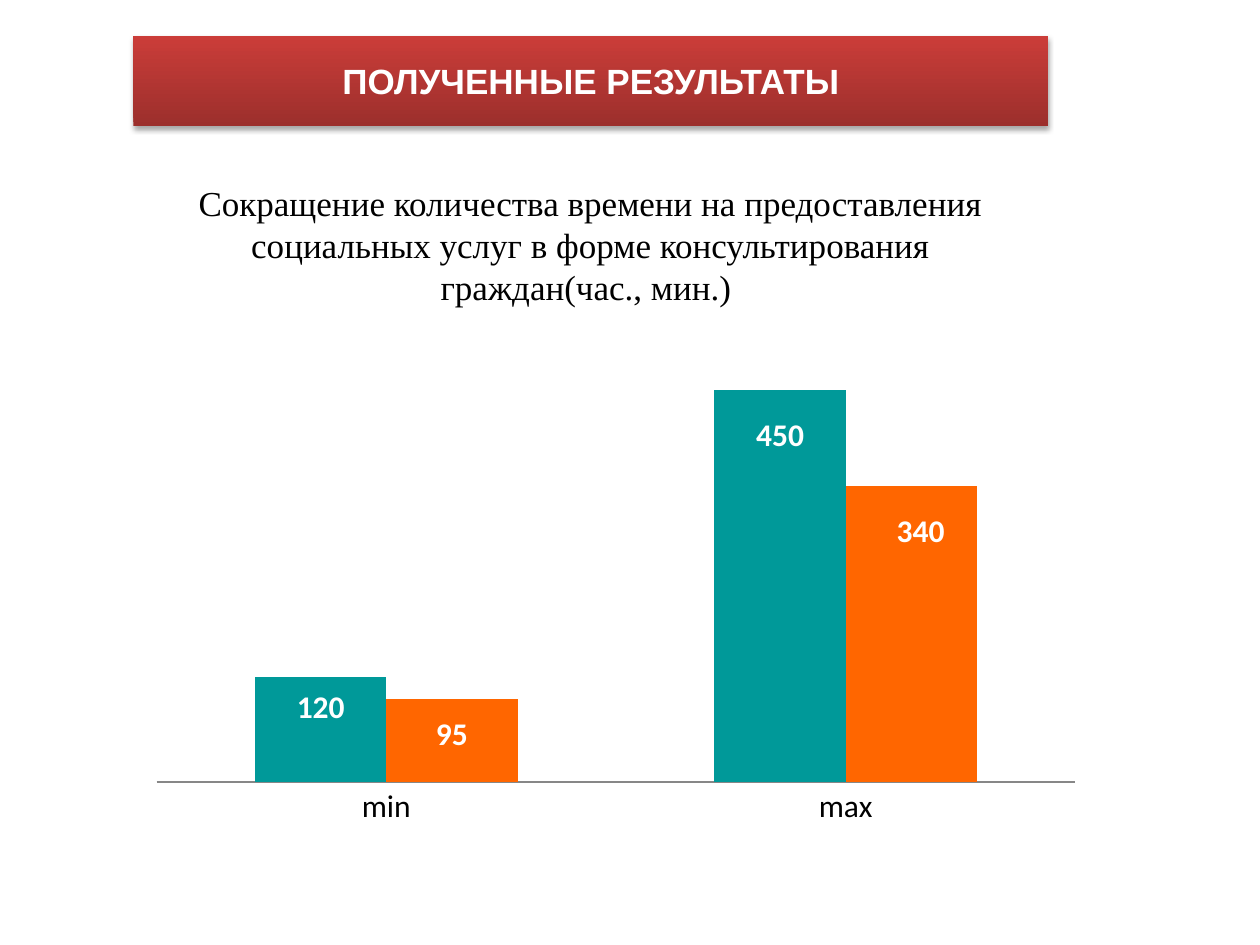
from dataclasses import dataclass

from lxml.etree import SubElement
from pptx import Presentation
from pptx.chart.data import CategoryChartData
from pptx.dml.color import RGBColor
from pptx.enum.chart import XL_CHART_TYPE as ChartType
from pptx.enum.chart import XL_LABEL_POSITION as LabelPosition
from pptx.enum.chart import XL_TICK_MARK as TickMark
from pptx.enum.shapes import MSO_SHAPE as Preset
from pptx.enum.text import MSO_ANCHOR as Anchor
from pptx.enum.text import MSO_AUTO_SIZE as AutoSize
from pptx.enum.text import PP_ALIGN as Align
from pptx.oxml import parse_xml
from pptx.oxml.ns import nsdecls, qn
from pptx.util import Inches, Pt

WIDTH, HEIGHT = Inches(10), Inches(7.5)

WHITE = RGBColor(0xFF, 0xFF, 0xFF)
BLACK = RGBColor(0x00, 0x00, 0x00)
DARK_RED = RGBColor(0x9C, 0x2F, 0x2C)
LIGHT_RED = RGBColor(0xCB, 0x3D, 0x39)
TEAL = RGBColor(0x00, 0x99, 0x99)
ORANGE = RGBColor(0xFF, 0x66, 0x00)
AXIS_GRAY = RGBColor(0x87, 0x87, 0x87)


@dataclass(frozen=True)
class Area:
    """A rectangle in shares of the slide's size."""
    left: float
    top: float
    width: float
    height: float

    def lengths(self) -> tuple:
        return (int(self.left * WIDTH), int(self.top * HEIGHT),
                int(self.width * WIDTH), int(self.height * HEIGHT))


@dataclass(frozen=True)
class BarSeries:
    """One bar colour; label shifts are shares of the chart's size."""
    name: str
    values: tuple
    color: RGBColor
    label_shifts: tuple


CHART_AREA = Area(0.114, 0.332, 0.74, 0.577)
CAPTION_AREA = Area(0.114, 0.185, 0.709, 0.191)
BANNER_AREA = Area(0.106, 0.038, 0.726, 0.095)

CATEGORIES = ("min", "max")
SERIES = (
    BarSeries("Series 1", (120, 450), TEAL, ((0, 0.01), (0, 0.04))),
    BarSeries("Series 2", (95, 340), ORANGE, ((0, 0.02), (0.01, 0.04))),
)


def set_font(font, name: str, size: float, color: RGBColor, bold: bool = False) -> None:
    font.name, font.size, font.bold = name, Pt(size), bold
    font.color.rgb = color


def write_centered(frame, text: str, font_name: str, color: RGBColor, bold: bool) -> None:
    frame.word_wrap = True
    para = frame.paragraphs[0]
    para.text = text
    para.alignment = Align.CENTER
    set_font(para.font, font_name, 20, color, bold)


def make_layout(**settings) -> object:
    layout = parse_xml(f"<c:layout {nsdecls('c')}><c:manualLayout/></c:layout>")
    for tag, value in settings.items():
        SubElement(layout[0], qn(f"c:{tag}")).set("val", str(value))
    return layout


def style_series(bars, series: BarSeries) -> None:
    bars.format.fill.solid()
    bars.format.fill.fore_color.rgb = series.color
    labels = bars.data_labels
    labels.show_value = True
    labels.position = LabelPosition.INSIDE_END
    set_font(labels.font, "Calibri", 18, WHITE, True)
    for index, (x, y) in enumerate(series.label_shifts):
        label = bars.points[index].data_label
        set_font(label.font, "Calibri", 18, WHITE, True)
        label.position = LabelPosition.INSIDE_END
        element = labels._element.findall(qn("c:dLbl"))[index]
        element.insert(1, make_layout(x=x, y=y))
    # Shifted labels stand without leader lines
    for leader in labels._element.findall(qn("c:showLeaderLines")):
        leader.set("val", "0")
    labels._element.append(parse_xml(
        f'<c:extLst {nsdecls("c")}><c:ext uri="{{CE6537A1-D6FC-4f65-9D91-7224C49458BB}}" '
        'xmlns:c15="http://schemas.microsoft.com/office/drawing/2012/chart">'
        '<c15:showLeaderLines val="0"/></c:ext></c:extLst>'))


def add_bar_chart(page) -> None:
    data = CategoryChartData()
    data.categories = CATEGORIES
    for series in SERIES:
        data.add_series(series.name, series.values)
    chart = page.shapes.add_chart(
        ChartType.COLUMN_CLUSTERED, *CHART_AREA.lengths(), data).chart
    set_font(chart.font, "Arial", 10, BLACK)
    chart.has_legend = chart.has_title = False

    # Axes
    axis = chart.category_axis
    axis.major_tick_mark = axis.minor_tick_mark = TickMark.NONE
    set_font(axis.tick_labels.font, "Calibri", 18, BLACK)
    axis.format.line.color.rgb = AXIS_GRAY
    axis.format.line.width = Pt(0.75)
    scale = chart.value_axis
    scale.minimum_scale, scale.maximum_scale = 0, 500
    scale.has_major_gridlines = False
    scale.visible = False

    # Plot and bars
    plot_area = chart._chartSpace.chart.plotArea
    for old in plot_area.findall(qn("c:layout")):
        plot_area.remove(old)
    plot_area.insert(0, make_layout(layoutTarget="inner", xMode="edge", yMode="edge",
                                    x=0.014, y=0.06, w=0.986, h=0.799))
    plot = chart.plots[0]
    plot.gap_width, plot.overlap = 150, 0
    plot.vary_by_categories = False
    for bars, series in zip(plot.series, SERIES):
        style_series(bars, series)


def add_caption(page, text: str) -> None:
    frame = page.shapes.add_textbox(*CAPTION_AREA.lengths()).text_frame
    write_centered(frame, text, "Times New Roman", BLACK, False)
    frame.auto_size = AutoSize.SHAPE_TO_FIT_TEXT


def add_banner(page, text: str) -> None:
    box = page.shapes.add_shape(Preset.RECTANGLE, *BANNER_AREA.lengths())
    box.line.fill.background()
    box.fill.gradient()
    box.fill.gradient_angle = 90
    for stop, color, position in zip(box.fill.gradient_stops, (DARK_RED, LIGHT_RED), (0, 1)):
        stop.color.rgb = color
        stop.position = position
    # Soft shadow below the banner
    box.shadow.inherit = False
    effects = box._element.spPr.find(qn("a:effectLst"))
    effects.append(parse_xml(
        f'<a:outerShdw {nsdecls("a")} blurRad="{Pt(3.1)}" dist="{Pt(1.8)}" '
        'dir="5400000" rotWithShape="0"><a:srgbClr val="000000">'
        '<a:alpha val="35000"/></a:srgbClr></a:outerShdw>'))
    box.text_frame.vertical_anchor = Anchor.MIDDLE
    write_centered(box.text_frame, text, "Arial", WHITE, True)


def main() -> None:
    deck = Presentation()
    deck.slide_width, deck.slide_height = WIDTH, HEIGHT
    page = deck.slides.add_slide(deck.slide_layouts[6])
    add_bar_chart(page)
    add_caption(page, "Сокращение количества времени на предоставления социальных услуг "
                      "в форме консультирования граждан(час., мин.) ")
    add_banner(page, "ПОЛУЧЕННЫЕ РЕЗУЛЬТАТЫ")
    deck.save("out.pptx")


if __name__ == "__main__":
    main()
